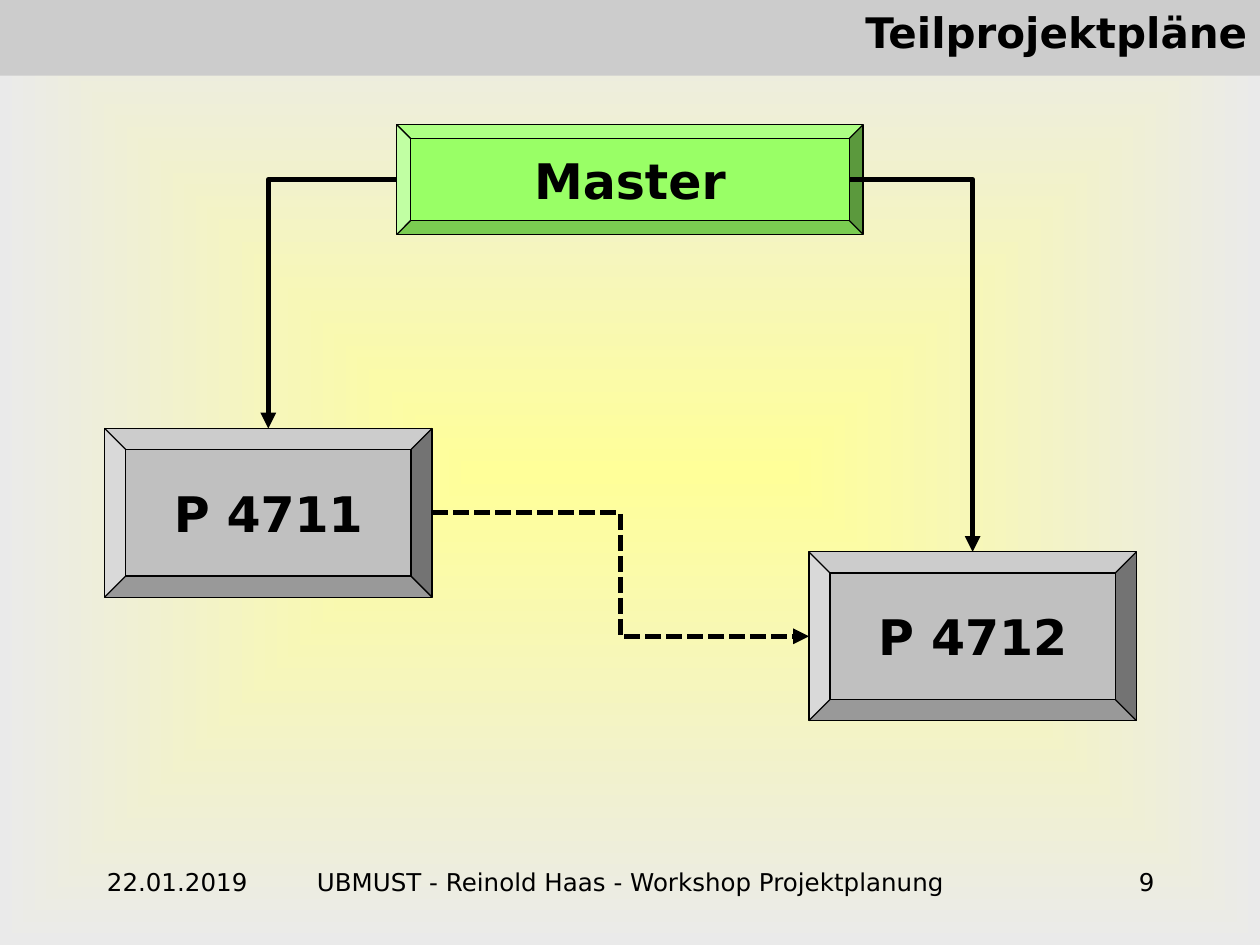
from lxml import etree
from pptx import Presentation
from pptx import util as u
from pptx.dml.color import RGBColor
from pptx.enum import dml, shapes, text
from pptx.oxml.ns import qn

theme = {
    "font": "DejaVu Sans", "ink": "000000", "bar": "CCCCCC",
    "glow": ("FFFF99", "EAEAEA"), "main": "99FF66", "part": "C0C0C0",
    "head": 24, "node": 28, "foot": 14, "edge": 0.75, "link": 3,
}
left, mid, right = text.PP_ALIGN.LEFT, text.PP_ALIGN.CENTER, text.PP_ALIGN.RIGHT

title = "Teilprojektpläne"
nodes = [
    ("P 4711", "part", (0.83, 3.4, 2.6, 1.34)),
    ("Master", "main", (3.15, 0.99, 3.7, 0.87)),
    ("P 4712", "part", (6.42, 4.38, 2.6, 1.34)),
]
foot = [
    ("22.01.2019", 1.42, left),
    ("UBMUST - Reinold Haas - Workshop Projektplanung", 5.67, mid),
    ("9", 1.42, right),
]
margin, base, band = 0.75, 6.83, 0.5


def color(key):
    return RGBColor.from_string(theme[key])


def apply(item, form):
    for key, val in form.items():
        setattr(item, key, val)


def write(shape, words, size, align, bold=False, **frame):
    box = shape.text_frame
    apply(box, {"auto_size": text.MSO_AUTO_SIZE.NONE, "word_wrap": True,
                "vertical_anchor": text.MSO_ANCHOR.TOP, **frame})
    para = box.paragraphs[0]
    para.alignment = align
    run = para.add_run()
    run.text = words
    apply(run.font, {"name": theme["font"], "size": u.Pt(theme[size]), "bold": bold})
    run.font.color.rgb = color("ink")


def paint(shape, key):
    shape.fill.solid()
    shape.fill.fore_color.rgb = color(key)


def link(slide, start, end, bends, dash=None):
    line = slide.shapes.add_connector(
        shapes.MSO_CONNECTOR.ELBOW, *map(u.Inches, (*start, *end)))
    apply(line.line, {"width": u.Pt(theme["link"]), "dash_style": dash})
    line.line.color.rgb = color("ink")
    props = line._element.spPr
    props.find(qn("a:prstGeom")).set("prst", f"bentConnector{bends + 1}")
    etree.SubElement(props.find(qn("a:ln")), qn("a:tailEnd"), type="triangle")
    etree.SubElement(props, qn("a:effectLst"))


def backdrop(slide):
    fill = slide.background.fill
    fill.gradient()
    for stop, tint in zip(fill.gradient_stops, theme["glow"]):
        stop.color.rgb = RGBColor.from_string(tint)
    lin = next(slide._element.iter(qn("a:lin")))
    focus = etree.Element(qn("a:path"), {"path": "shape"})
    etree.SubElement(focus, qn("a:fillToRect"), dict.fromkeys("ltrb", "50000"))
    lin.getparent().replace(lin, focus)


def main():
    deck = Presentation()
    apply(deck, {"slide_width": u.Inches(10), "slide_height": u.Inches(7.5)})
    slide = deck.slides.add_slide(deck.slide_layouts[5])
    backdrop(slide)

    head = slide.shapes.title
    apply(head, {"left": 0, "top": 0, "width": u.Inches(10), "height": u.Inches(0.6)})
    paint(head, "bar")
    write(head, title, "head", right, True)

    spots = {}
    for name, key, area in nodes:
        node = slide.shapes.add_shape(shapes.MSO_SHAPE.BEVEL, *map(u.Inches, area))
        node.shadow.inherit = False
        node.adjustments[0] = 0.125
        paint(node, key)
        node.line.color.rgb = color("ink")
        node.line.width = u.Pt(theme["edge"])
        write(node, name, "node", mid, True, word_wrap=False,
              vertical_anchor=text.MSO_ANCHOR.MIDDLE)
        x, y, w, h = area
        spots[name] = {"left": (x, y + h / 2), "right": (x + w, y + h / 2),
                       "top": (x + w / 2, y), "face": (x + w - h / 8, y + h / 2)}

    top, one, two = spots["Master"], spots["P 4711"], spots["P 4712"]
    link(slide, top["left"], one["top"], 1)
    link(slide, top["face"], two["top"], 1)
    link(slide, one["right"], two["left"], 2, dml.MSO_LINE.SQUARE_DOT)

    x = margin
    for words, wide, align in foot:
        area = map(u.Inches, (x, base, wide, band))
        write(slide.shapes.add_textbox(*area), words, "foot", align)
        x += wide

    deck.save("out.pptx")


if __name__ == "__main__":
    main()
